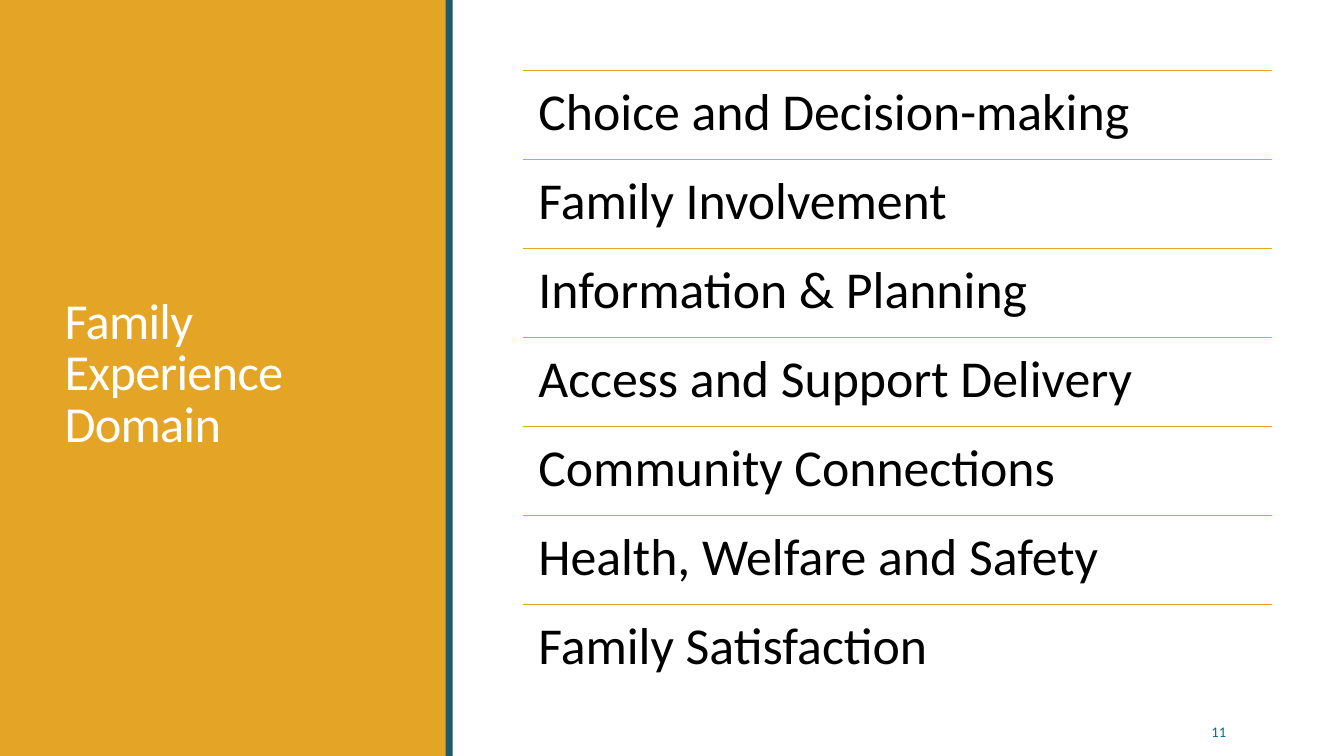
from lxml.etree import SubElement
from pptx import Presentation
from pptx.dml.color import RGBColor
from pptx.enum.shapes import MSO_CONNECTOR, MSO_SHAPE
from pptx.enum.text import MSO_ANCHOR, MSO_AUTO_SIZE, PP_ALIGN
from pptx.oxml.ns import qn
from pptx.util import Inches, Pt

GOLD = RGBColor(0xE4, 0xA4, 0x26)
TEAL = RGBColor(0x21, 0x59, 0x68)
NUMBER_TEAL = RGBColor(0x07, 0x6D, 0x82)
WHITE = RGBColor(0xFF, 0xFF, 0xFF)
BLACK = RGBColor(0, 0, 0)
FONT = "Calibri"

DOMAINS = [
    "Choice and Decision-making",
    "Family Involvement",
    "Information & Planning",
    "Access and Support Delivery",
    "Community Connections",
    "Health, Welfare and Safety",
    "Family Satisfaction",
]
LIST_LEFT, LIST_TOP, LIST_WIDTH, LIST_HEIGHT = 5.19, 0.7, 7.43, 6.18


def write_text(shape, text, size, color, align=PP_ALIGN.LEFT, anchor=MSO_ANCHOR.TOP,
               line_spacing=1.0, character_spacing=None, inset=None):
    """Put one formatted paragraph into a shape."""
    frame = shape.text_frame
    frame.word_wrap = True
    frame.auto_size = MSO_AUTO_SIZE.NONE
    frame.vertical_anchor = anchor
    if inset is not None:
        frame.margin_left = frame.margin_right = Inches(inset)
        frame.margin_top = frame.margin_bottom = Inches(inset)
    paragraph = frame.paragraphs[0]
    paragraph.alignment = align
    paragraph.line_spacing = line_spacing
    run = paragraph.add_run()
    run.text = text
    run.font.name = FONT
    run.font.size = Pt(size)
    run.font.color.rgb = color
    if character_spacing is not None:
        run.font._element.set("spc", str(int(character_spacing * 100)))


class SlideBuilder:
    """Holds the current slide and its style."""

    def __init__(self, presentation):
        self.slide = presentation.slides.add_slide(presentation.slide_layouts[5])
        self.shapes = self.slide.shapes
        self.slide.background.fill.solid()
        self.slide.background.fill.fore_color.rgb = WHITE

    def rectangle(self, left, top, width, height, color):
        shape = self.shapes.add_shape(MSO_SHAPE.RECTANGLE, Inches(left), Inches(top),
                                      Inches(width), Inches(height))
        shape.shadow.inherit = False
        shape.fill.solid()
        shape.fill.fore_color.rgb = color
        shape.line.fill.background()

    def title(self, text, left, top, width, height, **text_format):
        title = self.shapes.title
        title.left, title.top = Inches(left), Inches(top)
        title.width, title.height = Inches(width), Inches(height)
        write_text(title, text, **text_format)
        # Bring the title in front of the panel
        self.shapes._spTree.append(title._element)

    def text(self, text, left, top, width, height, **text_format):
        box = self.shapes.add_textbox(Inches(left), Inches(top), Inches(width), Inches(height))
        write_text(box, text, **text_format)

    def rule(self, left, top, width):
        line = self.shapes.add_connector(MSO_CONNECTOR.STRAIGHT, Inches(left), Inches(top),
                                         Inches(left + width), Inches(top))
        line.line.color.rgb = GOLD
        line.line.width = Pt(1.25)
        SubElement(line._element.spPr, qn("a:effectLst"))


def main():
    presentation = Presentation()
    presentation.slide_width = Inches(13.33)
    presentation.slide_height = Inches(7.5)
    builder = SlideBuilder(presentation)

    # Title panel
    builder.rectangle(0, 0, 4.43, 7.5, GOLD)
    builder.title("Family Experience Domain", 0.54, 0.57, 3.37, 6.31, size=36, color=WHITE,
                  anchor=MSO_ANCHOR.MIDDLE, line_spacing=0.85, character_spacing=-0.5)
    builder.rectangle(4.42, 0, 0.07, 7.5, TEAL)

    # Slide number
    builder.text("11", 11.07, 7.06, 1.19, 0.4, size=10.5, color=NUMBER_TEAL,
                 align=PP_ALIGN.RIGHT, anchor=MSO_ANCHOR.MIDDLE)

    # Ruled list of domains
    row_height = LIST_HEIGHT / len(DOMAINS)
    for index, domain in enumerate(DOMAINS):
        top = LIST_TOP + index * row_height
        builder.rule(LIST_LEFT, top, LIST_WIDTH)
        builder.text(domain, LIST_LEFT, top, LIST_WIDTH, row_height, size=37, color=BLACK,
                     line_spacing=0.9, inset=0.15)

    presentation.save("out.pptx")


if __name__ == "__main__":
    main()
